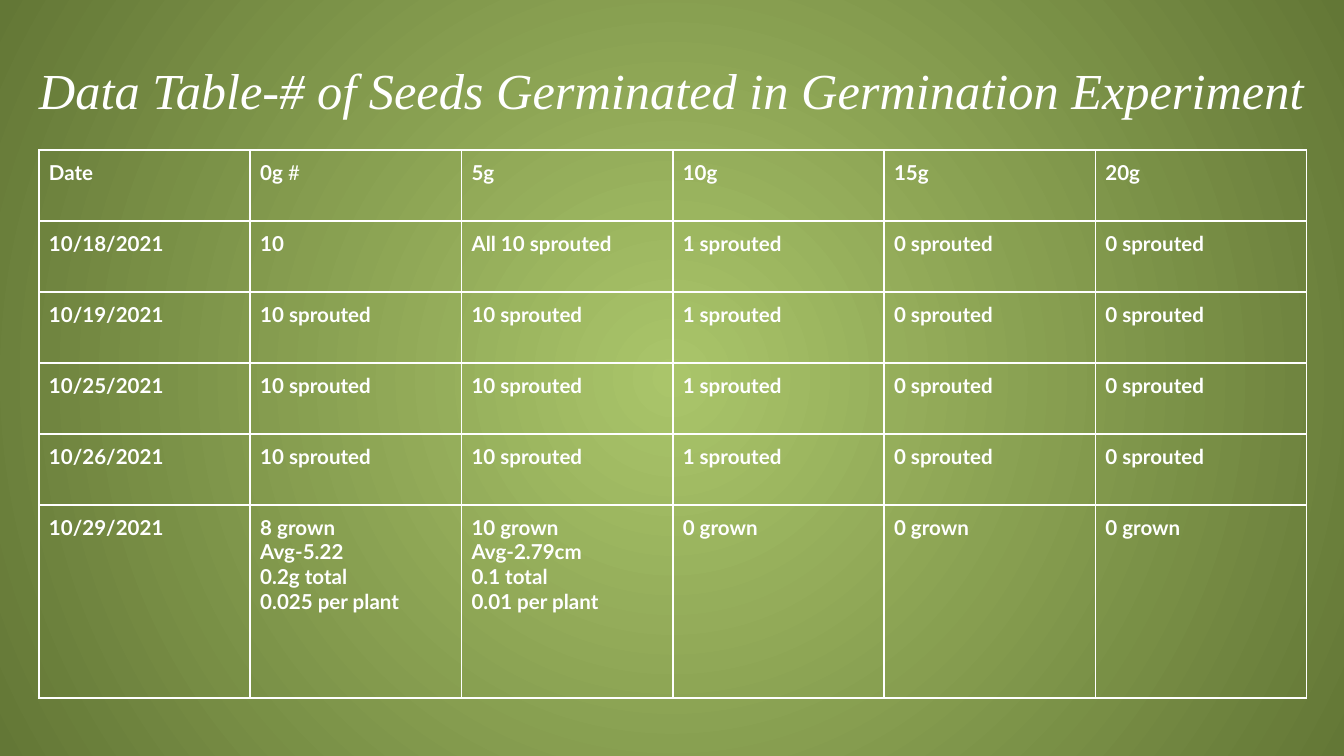
from pptx import Presentation, util as u
from pptx.dml.color import RGBColor
from pptx.enum import text as t
from pptx.oxml import parse_xml
from pptx.oxml.ns import nsdecls, qn

WHITE = RGBColor(0xFF, 0xFF, 0xFF)
LIGHT = RGBColor(0xAA, 0xC5, 0x6A)
DARK = RGBColor(0x63, 0x77, 0x36)

TITLE = "Data Table-# of Seeds Germinated in Germination Experiment"
SAME = ["10 sprouted", "10 sprouted", "1 sprouted", "0 sprouted", "0 sprouted"]
ROWS = [
    ["Date", "0g #", "5g", "10g", "15g", "20g"],
    ["10/18/2021", "10", "All 10 sprouted"] + SAME[2:],
    ["10/19/2021"] + SAME,
    ["10/25/2021"] + SAME,
    ["10/26/2021"] + SAME,
    ["10/29/2021",
     "8 grown\nAvg-5.22\n0.2g total\n0.025 per plant",
     "10 grown\nAvg-2.79cm\n0.1 total\n0.01 per plant",
     "0 grown", "0 grown", "0 grown"],
]
LEFT, TOP, WIDE = 39, 150, 1268
HIGH = [71] * 5 + [193]
HEAD = {"name": "Times New Roman", "size": u.Pt(27), "italic": True}
BODY = {"name": "Lato", "size": u.Pt(11), "bold": True}
SIDES = ("left", "top", "right", "bottom")


def px(n):
    return u.Emu(round(n * 914400 / 134.4))


def put(obj, vals):
    for key, val in vals.items():
        setattr(obj, key, val)


def style(font, vals):
    put(font, vals)
    font.color.rgb = WHITE


def edge(cell):
    props = cell._tc.get_or_add_tcPr()
    for i, tag in enumerate(("lnL", "lnR", "lnT", "lnB")):
        props.insert(i, parse_xml(
            f'<a:{tag} {nsdecls("a")} w="12700"><a:solidFill>'
            f'<a:srgbClr val="{WHITE}"/></a:solidFill></a:{tag}>'))


def write(cell, words):
    cell.fill.background()
    put(cell, {f"margin_{side}": px(10) for side in SIDES})
    for i, line in enumerate(words.split("\n")):
        frame = cell.text_frame
        para = frame.add_paragraph() if i else frame.paragraphs[0]
        main, mark, _ = line.partition("#")
        for part in filter(None, (main, mark)):
            run = para.add_run()
            run.text = part
            style(run.font, BODY | {"bold": part != "#"})
    edge(cell)


deck = Presentation()
put(deck, {"slide_width": px(1344), "slide_height": px(756)})
slide = deck.slides.add_slide(deck.slide_layouts[5])

fill = slide.background.fill
fill.gradient()
for stop, tone in zip(fill.gradient_stops, (LIGHT, DARK)):
    stop.color.rgb = tone
line = next(slide._element.iter(qn("a:lin")))
line.getparent().replace(line, parse_xml(
    f'<a:path {nsdecls("a")} path="circle"><a:fillToRect '
    'l="50000" t="50000" r="50000" b="50000"/></a:path>'))

title = slide.shapes.title
put(title, {"left": px(26), "top": px(7), "width": px(1301), "height": px(126)})
frame = title.text_frame
frame.text = TITLE
put(frame, {"word_wrap": True, "auto_size": t.MSO_AUTO_SIZE.NONE,
            "vertical_anchor": t.MSO_ANCHOR.BOTTOM}
    | {f"margin_{side}": px(13) for side in SIDES})
para = frame.paragraphs[0]
para.alignment = t.PP_ALIGN.LEFT
style(para.runs[0].font, HEAD)

table = slide.shapes.add_table(len(ROWS), len(ROWS[0]), px(LEFT), px(TOP),
                               px(WIDE), px(sum(HIGH))).table
put(table, {"first_row": False, "horz_banding": False})
for col in table.columns:
    col.width = px(WIDE / len(ROWS[0]))
for row, high, words in zip(table.rows, HIGH, ROWS):
    row.height = px(high)
    for cell, word in zip(row.cells, words):
        write(cell, word)

deck.save("out.pptx")
